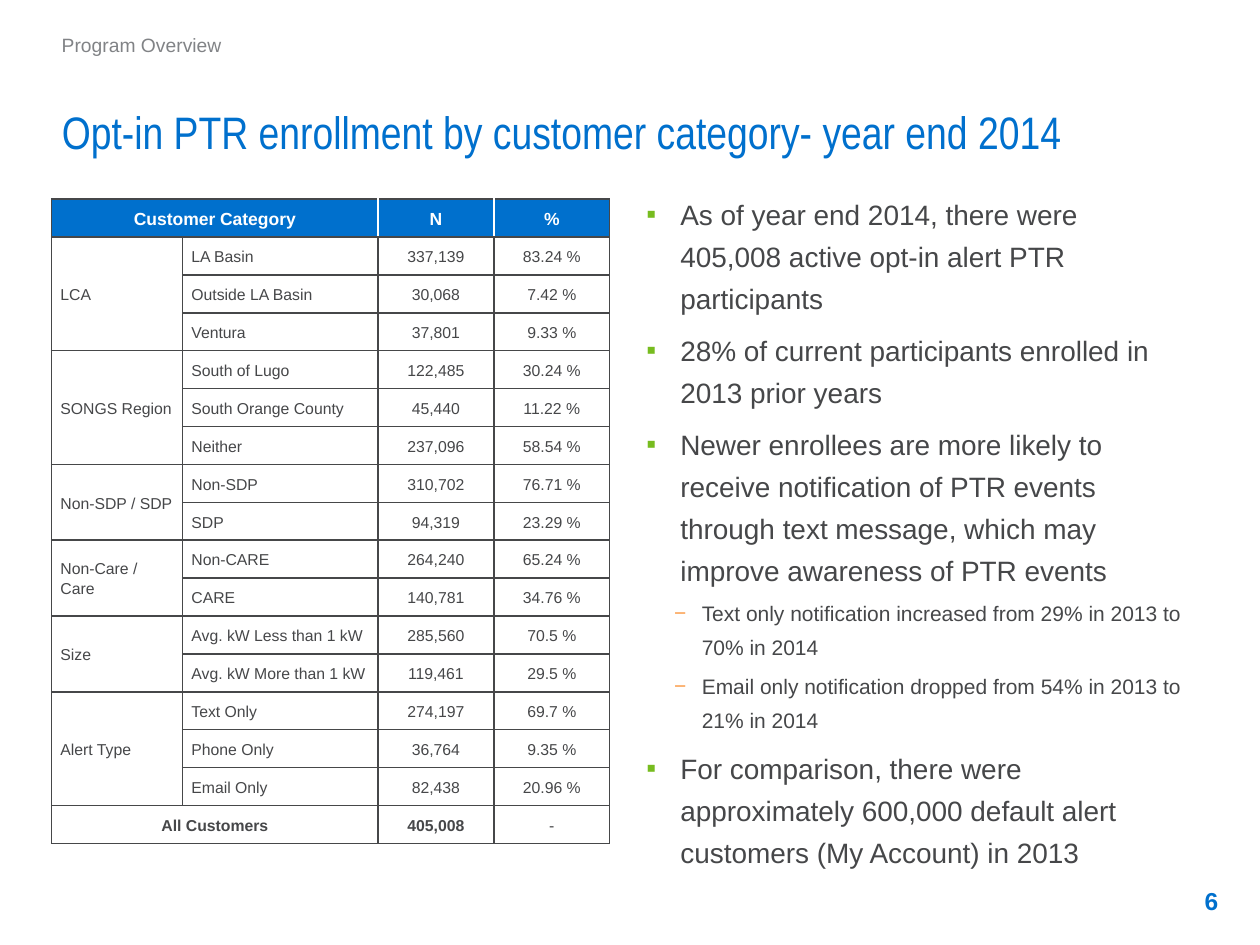
import lxml.etree
import pptx
import pptx.dml.color
import pptx.enum.text
import pptx.oxml.ns
import pptx.util

Inches = pptx.util.Inches
Pt = pptx.util.Pt
RGBColor = pptx.dml.color.RGBColor
Align = pptx.enum.text.PP_ALIGN
Anchor = pptx.enum.text.MSO_ANCHOR
qn = pptx.oxml.ns.qn

BLUE = RGBColor(0x00, 0x70, 0xCD)
DARK = RGBColor(0x46, 0x47, 0x49)
GRAY = RGBColor(0x81, 0x83, 0x86)
GREEN = RGBColor(0x77, 0xBC, 0x1F)
ORANGE = RGBColor(0xFB, 0x9E, 0x4C)
WHITE = RGBColor(0xFF, 0xFF, 0xFF)

HEADER = ["Customer Category", "N", "%"]
CATEGORIES = [
    ("LCA", [("LA Basin", "337,139", "83.24 %"),
             ("Outside LA Basin", "30,068", "7.42 %"),
             ("Ventura", "37,801", "9.33 %")]),
    ("SONGS Region", [("South of Lugo", "122,485", "30.24 %"),
                      ("South Orange County", "45,440", "11.22 %"),
                      ("Neither", "237,096", "58.54 %")]),
    ("Non-SDP / SDP", [("Non-SDP", "310,702", "76.71 %"),
                       ("SDP", "94,319", "23.29 %")]),
    ("Non-Care / Care", [("Non-CARE", "264,240", "65.24 %"),
                         ("CARE", "140,781", "34.76 %")]),
    ("Size", [("Avg. kW Less than 1 kW", "285,560", "70.5 %"),
              ("Avg. kW More than 1 kW", "119,461", "29.5 %")]),
    ("Alert Type", [("Text Only", "274,197", "69.7 %"),
                    ("Phone Only", "36,764", "9.35 %"),
                    ("Email Only", "82,438", "20.96 %")]),
]
TOTAL = ["All Customers", "405,008", "-"]
COLUMN_WIDTHS = [1.04, 1.55, 0.92, 0.92]

FINDINGS = [
    (0, "As of year end 2014, there were 405,008 active opt-in alert PTR participants"),
    (0, "28% of current participants enrolled in 2013 prior years"),
    (0, "Newer enrollees are more likely to receive notification of PTR events "
        "through text message, which may improve awareness of PTR events"),
    (1, "Text only notification increased from 29% in 2013 to 70% in 2014"),
    (1, "Email only notification dropped from 54% in 2013 to 21% in 2014"),
    (0, "For comparison, there were approximately 600,000 default alert "
        "customers (My Account) in 2013"),
]
LEVELS = [
    dict(bullet="▪", bullet_color=GREEN, left=0.27, hanging=0.27,
         size=16, line_spacing=1.25, before=3.2),
    dict(bullet="−", bullet_color=ORANGE, left=0.44, hanging=0.22,
         size=12, line_spacing=1.35, before=0.3),
]


def write_text(paragraph, text, size, color=DARK, font="Arial", bold=False,
               align=Align.LEFT, line_spacing=1.0, before=0, after=0):
    paragraph.alignment = align
    paragraph.line_spacing = line_spacing
    paragraph.space_before = Pt(before)
    paragraph.space_after = Pt(after)
    run = paragraph.add_run()
    run.text = text
    run.font.name = font
    run.font.size = Pt(size)
    run.font.bold = bold
    run.font.color.rgb = color


def add_solid_fill(parent, color):
    fill = lxml.etree.SubElement(parent, qn("a:solidFill"))
    lxml.etree.SubElement(fill, qn("a:srgbClr"), val=str(color))


def add_bullet(paragraph, character, color, left, hanging):
    properties = paragraph._p.get_or_add_pPr()
    properties.set("marL", str(Inches(left)))
    properties.set("indent", str(-Inches(hanging)))
    bullet_color = lxml.etree.SubElement(properties, qn("a:buClr"))
    lxml.etree.SubElement(bullet_color, qn("a:srgbClr"), val=str(color))
    lxml.etree.SubElement(properties, qn("a:buFont"), typeface="Arial")
    lxml.etree.SubElement(properties, qn("a:buChar"), char=character)


def set_frame(shape, margins=(0, 0.05, 0.1, 0.05), anchor=Anchor.TOP, wrap=True):
    """Set left, top, right and bottom margins, anchor and wrapping."""
    frame = shape.text_frame
    frame.auto_size = pptx.enum.text.MSO_AUTO_SIZE.NONE
    frame.word_wrap = wrap
    frame.vertical_anchor = anchor
    (frame.margin_left, frame.margin_top,
     frame.margin_right, frame.margin_bottom) = map(Inches, margins)
    return frame


def add_text_box(slide, left, top, width, height, **frame_format):
    box = slide.shapes.add_textbox(
        Inches(left), Inches(top), Inches(width), Inches(height))
    return set_frame(box, **frame_format)


def set_title(slide, text):
    title = slide.shapes.title
    title.left, title.top = Inches(0.49), Inches(0.57)
    title.width, title.height = Inches(9.01), Inches(0.74)
    frame = set_frame(title, anchor=Anchor.BOTTOM)
    write_text(frame.paragraphs[0], text, 26, color=BLUE, font="Arial Narrow")


def set_borders(cell, left=DARK, right=DARK):
    properties = cell._tc.get_or_add_tcPr()
    sides = [("a:lnL", left), ("a:lnR", right), ("a:lnT", DARK), ("a:lnB", DARK)]
    for position, (tag, color) in enumerate(sides):
        line = lxml.etree.Element(qn(tag), w=str(Pt(1)))
        add_solid_fill(line, color)
        properties.insert(position, line)


def format_cell(cell, fill):
    cell.fill.solid()
    cell.fill.fore_color.rgb = fill
    cell.vertical_anchor = Anchor.MIDDLE
    cell.margin_left = cell.margin_right = Inches(0.07)
    cell.margin_top = cell.margin_bottom = 0


def write_cell(cell, text, size=9, align=Align.CENTER, **text_format):
    write_text(cell.text_frame.paragraphs[0], text, size, align=align,
               line_spacing=1.15, **text_format)


def add_enrollment_table(slide):
    row_count = 2 + sum(len(rows) for _, rows in CATEGORIES)
    last_row, last_column = row_count - 1, len(COLUMN_WIDTHS) - 1
    table = slide.shapes.add_table(
        row_count, len(COLUMN_WIDTHS),
        Inches(0.41), Inches(1.58), Inches(4.43), Inches(5.12)).table
    table.first_row = table.horz_banding = False
    for column, width in zip(table.columns, COLUMN_WIDTHS):
        column.width = Inches(width)

    for row in range(row_count):
        for column in range(len(COLUMN_WIDTHS)):
            cell = table.cell(row, column)
            header = row == 0
            format_cell(cell, BLUE if header else WHITE)
            set_borders(cell,
                        left=WHITE if header and column > 0 else DARK,
                        right=WHITE if header and column < last_column else DARK)

    for row in (0, last_row):
        table.cell(row, 0).merge(table.cell(row, 1))
    for column, heading, total in zip((0, 2, 3), HEADER, TOTAL):
        write_cell(table.cell(0, column), heading, size=10, color=WHITE, bold=True)
        write_cell(table.cell(last_row, column), total, bold=column < last_column)

    row = 1
    for category, entries in CATEGORIES:
        table.cell(row, 0).merge(table.cell(row + len(entries) - 1, 0))
        write_cell(table.cell(row, 0), category, align=Align.LEFT)
        for name, count, share in entries:
            write_cell(table.cell(row, 1), name, align=Align.LEFT)
            write_cell(table.cell(row, 2), count)
            write_cell(table.cell(row, 3), share)
            row += 1


def add_findings(slide):
    frame = add_text_box(slide, 5.13, 1.45, 4.36, 5.24)
    for index, (level, text) in enumerate(FINDINGS):
        style = LEVELS[level]
        paragraph = frame.add_paragraph() if index else frame.paragraphs[0]
        paragraph.level = level
        add_bullet(paragraph, style["bullet"], style["bullet_color"],
                   style["left"], style["hanging"])
        write_text(paragraph, text, style["size"],
                   line_spacing=style["line_spacing"],
                   before=style["before"] if index else 0, after=2.6)


def main():
    presentation = pptx.Presentation()
    presentation.slide_width = Inches(10)
    presentation.slide_height = Inches(7.5)
    slide = presentation.slides.add_slide(presentation.slide_layouts[5])

    set_title(slide, "Opt-in PTR enrollment by customer category- year end 2014")
    page_number = add_text_box(slide, 9.11, 6.95, 0.65, 0.4,
                               margins=(0.09, 0.04, 0.09, 0.04), anchor=Anchor.MIDDLE)
    write_text(page_number.paragraphs[0], "6", 14, color=BLUE, bold=True,
               align=Align.RIGHT)
    section = add_text_box(slide, 0.49, 0.18, 7.7, 0.28, wrap=False)
    write_text(section.paragraphs[0], "Program Overview", 11, color=GRAY,
               line_spacing=1.2, after=2.6)
    add_enrollment_table(slide)
    add_findings(slide)
    presentation.save("out.pptx")


if __name__ == "__main__":
    main()
